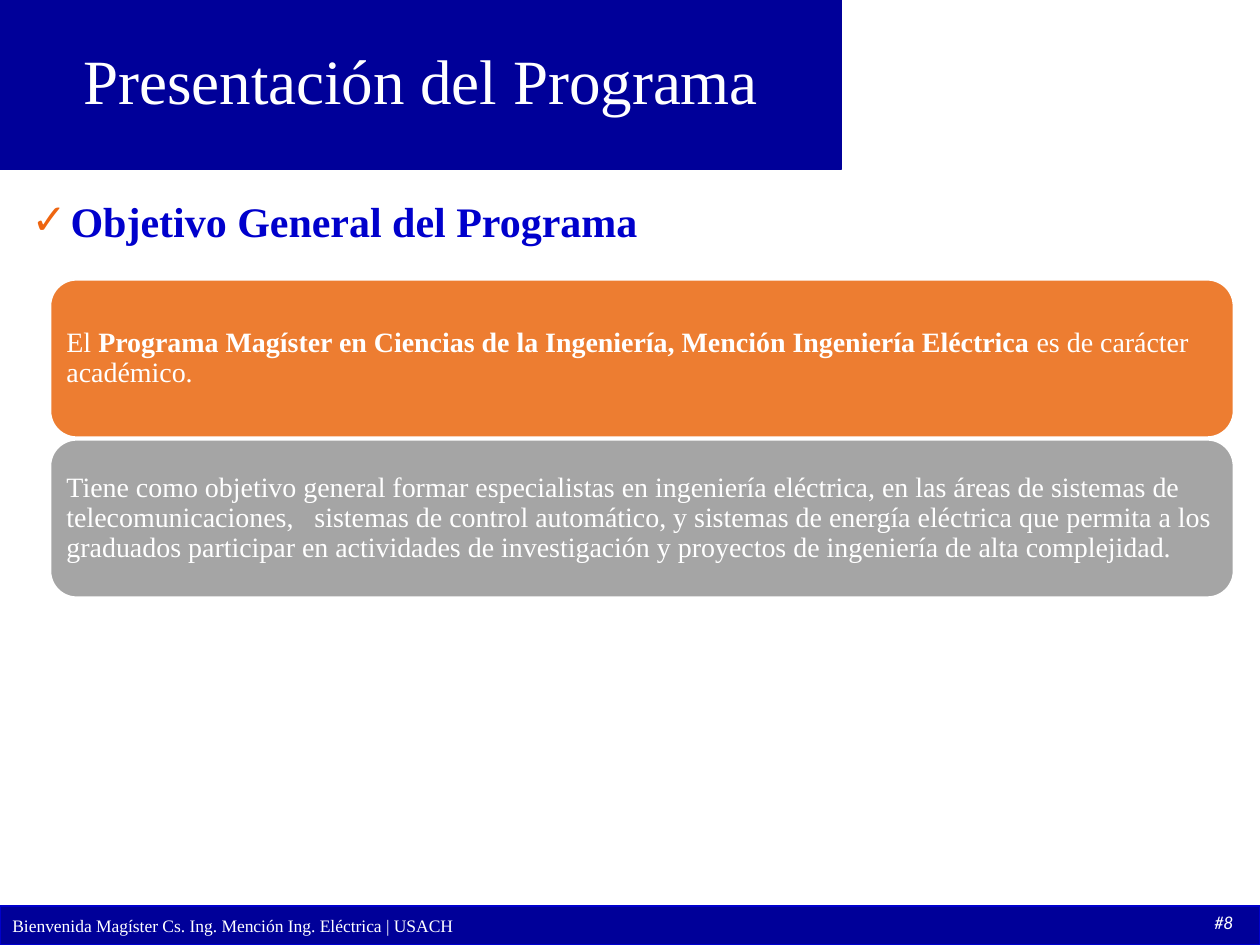
from lxml import etree
from pptx import Presentation
from pptx import util as u
from pptx.dml.color import RGBColor
from pptx.enum import shapes, text
from pptx.oxml.ns import qn

NAVY, BLUE, WHITE, CHECK = "000099", "0000CC", "FFFFFF", "EE6510"
CELL = u.Inches(0.1)  # the slide is a grid of 100 columns by 75 rows


def grid(*cells):
    return [round(n * CELL) for n in cells]


def style(box, runs, font, fill=None, line=None, para=None, frame=None):
    """Fill, outline and one formatted paragraph; runs are (text, bold) pairs."""
    if fill:
        box.fill.solid()
        box.fill.fore_color.rgb = RGBColor.from_string(fill)
        box.line.color.rgb = RGBColor.from_string(line)
        box.line.width = u.Pt(1)
    body = box.text_frame
    for name, value in {"word_wrap": True, "auto_size": text.MSO_AUTO_SIZE.NONE,
                        "vertical_anchor": text.MSO_ANCHOR.TOP, **(frame or {})}.items():
        setattr(body, name, value)
    paragraph = body.paragraphs[0]
    for name, value in {"alignment": text.PP_ALIGN.LEFT, "space_before": u.Pt(0),
                        **(para or {})}.items():
        setattr(paragraph, name, value)
    color, font_format = font
    for words, bold in runs:
        run = paragraph.add_run()
        run.text = words
        run.font.color.rgb = RGBColor.from_string(color)
        for name, value in {"name": "Times New Roman", "bold": bold, **font_format}.items():
            setattr(run.font, name, value)
    return paragraph


deck = Presentation()
deck.slide_width, deck.slide_height = grid(100, 75)
slide = deck.slides.add_slide(deck.slide_layouts[1])
title, heading = slide.placeholders
MIDDLE = text.MSO_ANCHOR.MIDDLE

# Title band
title.left, title.top, title.width, title.height = grid(0, 0, 66.8, 13.4)
style(title, [("Presentación del Programa", False)], (WHITE, {"size": u.Pt(36)}),
      NAVY, NAVY, {"alignment": text.PP_ALIGN.CENTER, "line_spacing": 0.9},
      {"vertical_anchor": MIDDLE})

# Section heading with its check mark
heading.left, heading.top, heading.width, heading.height = grid(1.5, 15, 95.2, 5)
item = style(heading, [("Objetivo General del Programa", True)],
             (BLUE, {"size": u.Pt(24)}), para={"alignment": text.PP_ALIGN.JUSTIFY})
props = item._p.get_or_add_pPr()
indent = grid(3.1)[0]
props.set("marL", str(indent))
props.set("indent", str(-indent))
bullet_color = etree.SubElement(props, qn("a:buClr"))
etree.SubElement(bullet_color, qn("a:srgbClr"), val=CHECK)
etree.SubElement(props, qn("a:buChar"), char="✓")

# Objective cards
cards = [
    ("ED7D31", [
        ("El ", False),
        ("Programa Magíster en Ciencias de la Ingeniería, Mención Ingeniería Eléctrica", True),
        (" es de carácter académico.", False)]),
    ("A5A5A5", [
        ("Tiene como objetivo general formar especialistas en ingeniería eléctrica, en las "
         "áreas de sistemas de telecomunicaciones,   sistemas de control automático, y "
         "sistemas de energía eléctrica que permita a los graduados participar en actividades "
         "de investigación y proyectos de ingeniería de alta complejidad.", False)]),
]
inset = grid(0.67)[0]  # the rounded corners add their own inset
card_frame = {"vertical_anchor": MIDDLE}
card_frame.update({f"margin_{side}": inset for side in ("left", "top", "right", "bottom")})
for row, (fill, runs) in enumerate(cards):
    card = slide.shapes.add_shape(shapes.MSO_SHAPE.ROUNDED_RECTANGLE,
                                  *grid(4, 22.2 + 12.7 * row, 93.9, 12.5))
    card.shadow.inherit = False
    style(card, runs, (WHITE, {"size": u.Pt(16)}), fill, WHITE,
          {"line_spacing": 0.9}, card_frame)

# Footer band, event name and page number
band = slide.shapes.add_shape(shapes.MSO_SHAPE.RECTANGLE, *grid(0, 71.9, 100, 3.1))
band.shadow.inherit = False
style(band, [], (WHITE, {}), NAVY, BLUE)
event = slide.shapes.add_textbox(*grid(0, 72.15, 92.3, 2.7))
style(event, [("Bienvenida Magíster Cs. Ing. Mención Ing. Eléctrica | USACH", False)],
      (WHITE, {"size": u.Pt(10)}))
page = slide.shapes.add_textbox(*grid(95.4, 71.85, 5.3, 2.8))
style(page, [("#8", False)],
      (WHITE, {"size": u.Pt(10.5), "name": "Calibri", "italic": True}),
      frame={"word_wrap": False})

deck.save("out.pptx")
